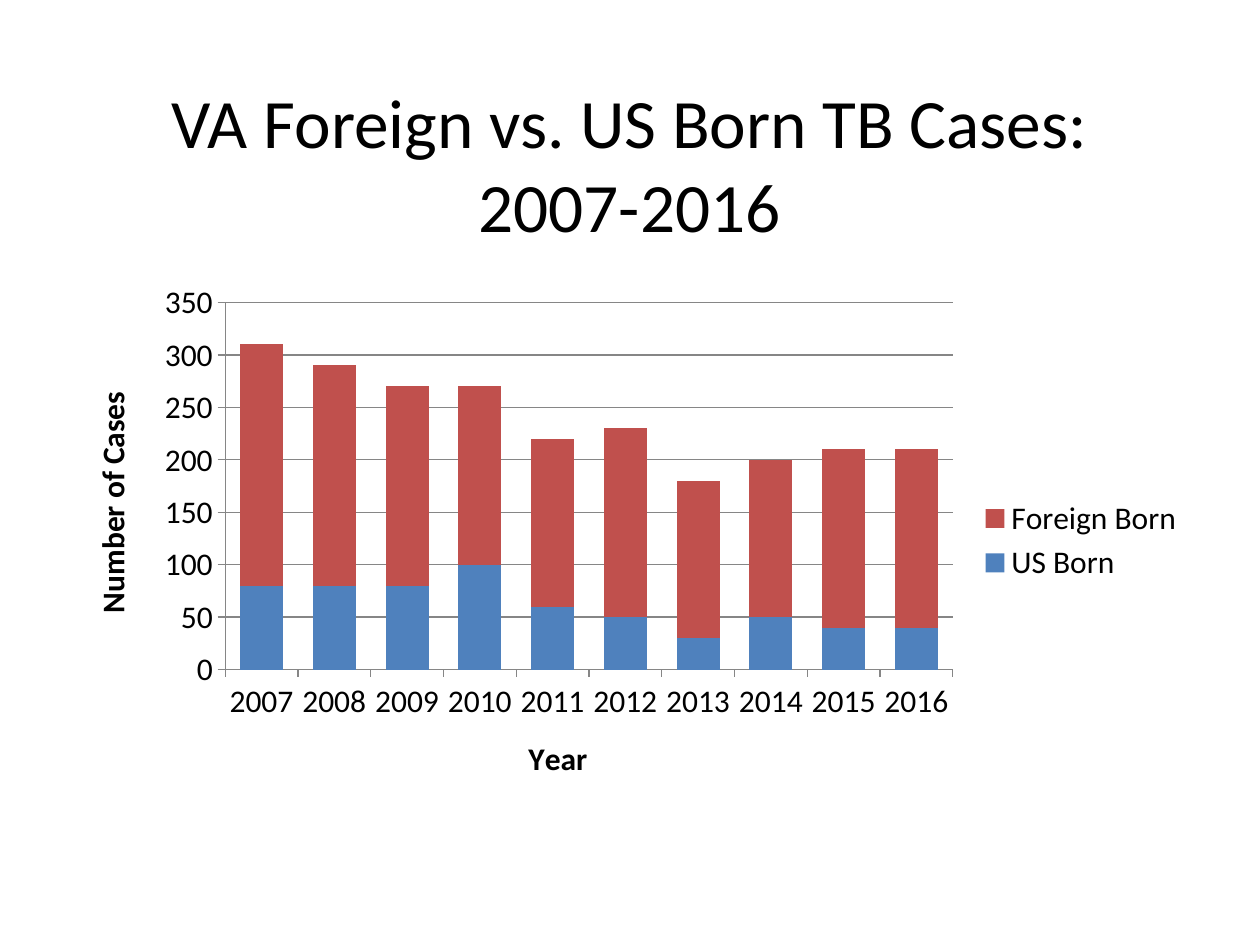
from dataclasses import dataclass

from lxml.etree import SubElement
from pptx import Presentation
from pptx.chart.data import CategoryChartData
from pptx.dml.color import RGBColor
from pptx.enum.chart import XL_CHART_TYPE, XL_LEGEND_POSITION, XL_TICK_MARK
from pptx.enum.text import MSO_ANCHOR, MSO_AUTO_SIZE, PP_ALIGN
from pptx.oxml.ns import qn
from pptx.util import Cm, Pt


@dataclass(frozen=True)
class Theme:
    font: str = "Calibri"
    ink: str = "000000"
    grid: str = "868686"
    us_born: str = "4F81BD"
    foreign_born: str = "C0504D"
    title_size: float = 39.6
    chart_size: float = 18


@dataclass(frozen=True)
class CaseSeries:
    name: str
    cases: tuple[int, ...]
    color: str


THEME = Theme()
YEARS = range(2007, 2017)
SERIES = (
    CaseSeries("US Born", (80, 80, 80, 100, 60, 50, 30, 50, 40, 40), THEME.us_born),
    CaseSeries("Foreign Born", (230, 210, 190, 170, 160, 180, 150, 150, 170, 170), THEME.foreign_born),
)
CHART_WIDTH, CHART_HEIGHT = Cm(22.86), Cm(10.8)


def format_font(font, *, size: float, bold: bool = False) -> None:
    """Apply the theme face and ink at the given size."""
    font.name = THEME.font
    font.size = Pt(size)
    font.bold = bold
    font.color.rgb = RGBColor.from_string(THEME.ink)


def write_text(frame, text: str, *, size: float, bold: bool = False) -> None:
    """Put one centred, formatted paragraph in a text frame."""
    para = frame.paragraphs[0]
    para.alignment = PP_ALIGN.CENTER
    span = para.add_run()
    span.text = text
    format_font(span.font, size=size, bold=bold)


def place_part(parent, index: int, **lengths: Cm) -> None:
    """Give a chart part a manual layout measured from the chart's corner."""
    for old in parent.findall(qn("c:layout")):
        parent.remove(old)
    layout = SubElement(parent, qn("c:layout"))
    parent.insert(index, layout)
    manual = SubElement(layout, qn("c:manualLayout"))
    if "w" in lengths:
        SubElement(manual, qn("c:layoutTarget")).set("val", "inner")
    for side in ("x", "y"):
        SubElement(manual, qn(f"c:{side}Mode")).set("val", "edge")
    for side, length in lengths.items():
        whole = CHART_WIDTH if side in ("x", "w") else CHART_HEIGHT
        SubElement(manual, qn(f"c:{side}")).set("val", f"{length / whole:.4f}")


def format_axis(axis, title: str, *, x: Cm, y: Cm, rotation: int = 0) -> None:
    """Style an axis and place its bold title."""
    axis.major_tick_mark = XL_TICK_MARK.OUTSIDE
    axis.minor_tick_mark = XL_TICK_MARK.NONE
    axis.format.line.color.rgb = RGBColor.from_string(THEME.grid)
    format_font(axis.tick_labels.font, size=THEME.chart_size)
    heading = axis.axis_title
    write_text(heading.text_frame, title, size=THEME.chart_size, bold=True)
    element = heading._element
    element.find(f".//{qn('a:bodyPr')}").set("rot", str(rotation * 60000))
    place_part(element, 1, x=x, y=y)


def add_case_chart(page) -> None:
    """Add the stacked columns of cases by year."""
    case_data = CategoryChartData()
    case_data.categories = [str(year) for year in YEARS]
    for entry in SERIES:
        case_data.add_series(entry.name, entry.cases)
    chart = page.shapes.add_chart(
        XL_CHART_TYPE.COLUMN_STACKED, Cm(1.27), Cm(5.5), CHART_WIDTH, CHART_HEIGHT, case_data
    ).chart
    format_font(chart.font, size=THEME.chart_size)
    chart.has_title = False
    chart.has_legend = True
    chart.legend.position = XL_LEGEND_POSITION.RIGHT
    chart.legend.include_in_layout = False
    plot = chart.plots[0]
    plot.gap_width = 69
    plot.overlap = 100
    plot.vary_by_categories = False
    for series, entry in zip(plot.series, SERIES):
        series.format.fill.solid()
        series.format.fill.fore_color.rgb = RGBColor.from_string(entry.color)
    format_axis(chart.category_axis, "Year", x=Cm(9.27), y=Cm(9.24))
    values = chart.value_axis
    format_axis(values, "Number of Cases", x=Cm(0.44), y=Cm(2.28), rotation=-90)
    values.minimum_scale, values.maximum_scale, values.major_unit = 0, 350, 50
    values.major_gridlines.format.line.color.rgb = RGBColor.from_string(THEME.grid)
    plot_area = chart._chartSpace.find(f".//{qn('c:plotArea')}")
    place_part(plot_area, 0, x=Cm(3.27), y=Cm(0.6), w=Cm(14.67), h=Cm(7.4))


def main() -> None:
    """Build and save the deck."""
    deck = Presentation()
    deck.slide_width, deck.slide_height = Cm(25.4), Cm(19.05)
    page = deck.slides.add_slide(deck.slide_layouts[5])
    title = page.shapes.title
    title.left, title.top, title.width, title.height = Cm(1.9), Cm(1.69), Cm(21.59), Cm(3.18)
    frame = title.text_frame
    frame.word_wrap = True
    frame.auto_size = MSO_AUTO_SIZE.NONE
    frame.vertical_anchor = MSO_ANCHOR.MIDDLE
    write_text(frame, "VA Foreign vs. US Born TB Cases: 2007-2016", size=THEME.title_size)
    add_case_chart(page)
    deck.save("out.pptx")


if __name__ == "__main__":
    main()
